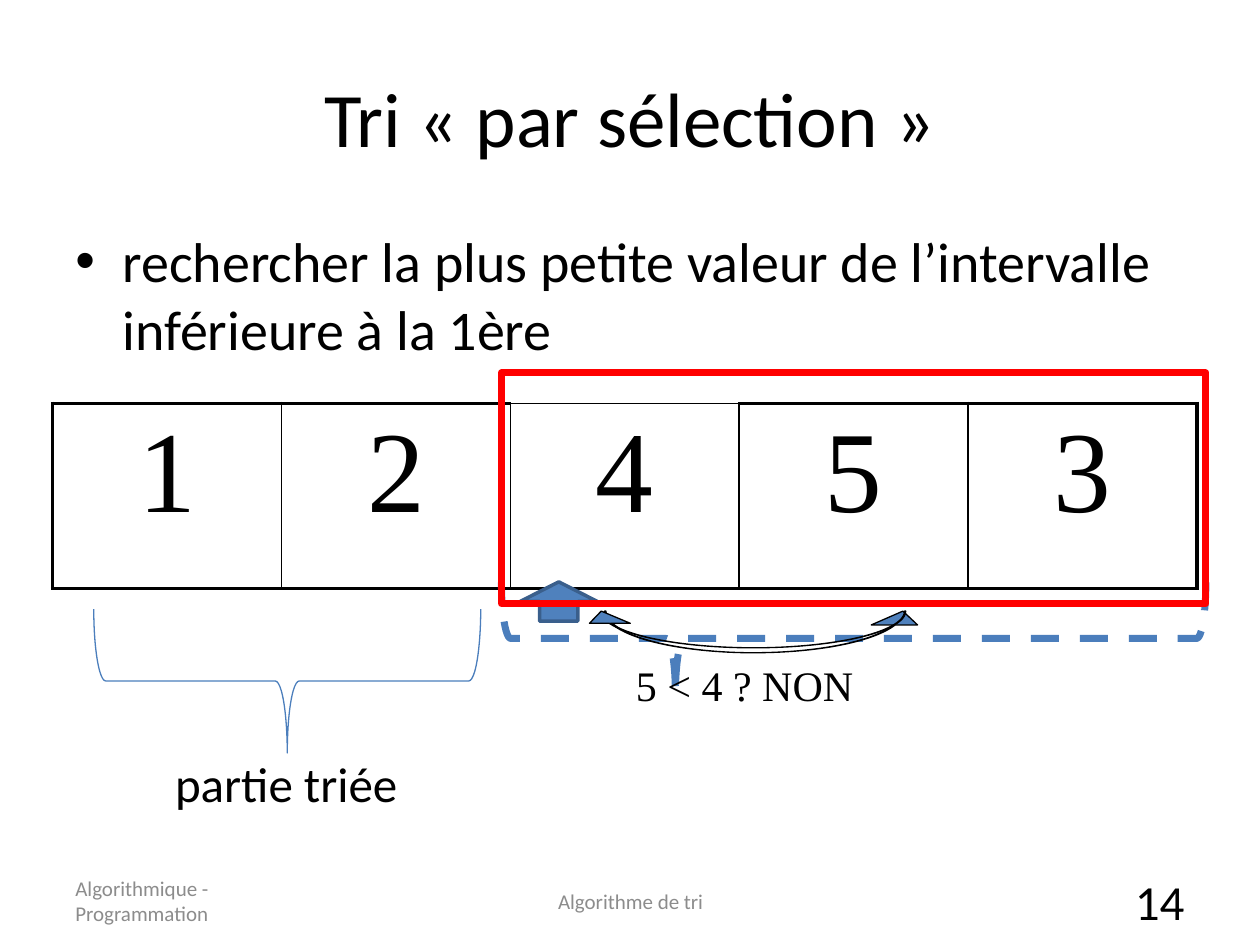
"""Build the selection sort slide: array, sorted part and current comparison."""
from dataclasses import dataclass
from typing import Optional

from lxml.etree import SubElement
from pptx import Presentation
from pptx.dml.color import RGBColor
from pptx.enum.dml import MSO_LINE_DASH_STYLE as Dash
from pptx.enum.shapes import MSO_AUTO_SHAPE_TYPE as Preset
from pptx.enum.text import MSO_AUTO_SIZE as AutoSize
from pptx.enum.text import MSO_VERTICAL_ANCHOR as Anchor
from pptx.enum.text import PP_PARAGRAPH_ALIGNMENT as Align
from pptx.oxml.ns import qn
from pptx.util import Cm, Pt

BLACK = RGBColor(0x00, 0x00, 0x00)
GRAY = RGBColor(0x8C, 0x8C, 0x8C)
RED = RGBColor(0xFF, 0x00, 0x00)
BLUE = RGBColor(0x4F, 0x81, 0xBD)
BRACE_BLUE = RGBColor(0x4B, 0x7E, 0xBC)
DARK_BLUE = RGBColor(0x3A, 0x5F, 0x8C)
SANS, SERIF = "Calibri", "Times New Roman"
THIN, THICK = 1, 2.25
VALUES = ("1", "2", "4", "5", "3")
CURRENT = 2


@dataclass(frozen=True)
class Mark:
    preset: Preset
    at: tuple
    line: RGBColor
    width: float
    fill: Optional[RGBColor] = None
    adjust: tuple = ()
    rotation: int = 0
    flip: Optional[str] = None
    dash: Optional[Dash] = None


@dataclass(frozen=True)
class Label:
    text: str
    at: tuple
    size: float
    font: str = SANS
    color: RGBColor = BLACK
    align: Align = Align.LEFT
    anchor: Anchor = Anchor.TOP
    wrap: bool = True


TASK = Label("rechercher la plus petite valeur de l’intervalle inférieure à la 1ère",
             (1.27, 4.45, 22.86, 12.57), 32)
FOOTERS = (
    Label("Algorithmique - Programmation", (1.27, 17.65, 5.8, 1.02), 12,
          color=GRAY, anchor=Anchor.MIDDLE),
    Label("Algorithme de tri", (8.69, 17.65, 8.05, 1.02), 12,
          color=GRAY, align=Align.CENTER, anchor=Anchor.MIDDLE),
    Label("14", (18.21, 17.65, 5.92, 1.02), 28,
          align=Align.RIGHT, anchor=Anchor.MIDDLE),
)
COMPARISON = Label("5 < 4 ? NON", (12.57, 13.18, 4.93, 1.27), 24, font=SERIF, wrap=False)
SORTED_PART = Label("partie triée", (3.28, 15.06, 5.03, 1.45), 28, wrap=False)

BEND = (0.032, 1.112, 0.333)
UNSORTED_BRACE = Mark(Preset.LEFT_BRACE, (16.08, 5.77, 2.26, 14.2), BRACE_BLUE, 4,
                      adjust=(0.083, 0.247), rotation=270, dash=Dash.DASH)
SWEEPS = (
    Mark(Preset.CURVED_UP_ARROW, (12.19, 12.32, 6.48, 0.84), BLACK, 0.75, BLUE, BEND),
    Mark(Preset.CURVED_UP_ARROW, (11.71, 12.32, 6.55, 0.74), BLACK, 0.75, BLUE, BEND,
         flip="flipH"),
)
POINTER = Mark(Preset.UP_ARROW, (10.49, 11.73, 1.55, 0.79), DARK_BLUE, 2, BLUE)
SORTED_BRACE = Mark(Preset.LEFT_BRACE, (4.34, 9.83, 2.9, 7.8), BRACE_BLUE, 0.75,
                    rotation=270, flip="flipV")
INTERVAL = Mark(Preset.RECTANGLE, (10.11, 7.52, 14.2, 4.65), RED, 4)


def write(frame, text: str, *, size: float, font: str = SANS,
          color: RGBColor = BLACK, align: Align = Align.LEFT):
    para = frame.paragraphs[0]
    para.alignment = align
    span = para.add_run()
    span.text = text
    span.font.size = Pt(size)
    span.font.name = font
    span.font.color.rgb = color
    return para


def add_label(page, label: Label):
    box = page.shapes.add_textbox(*map(Cm, label.at))
    frame = box.text_frame
    frame.word_wrap = label.wrap
    frame.auto_size = AutoSize.NONE if label.wrap else AutoSize.SHAPE_TO_FIT_TEXT
    frame.vertical_anchor = label.anchor
    return write(frame, label.text, size=label.size, font=label.font,
                 color=label.color, align=label.align)


def add_bullet(para) -> None:
    properties = para._p.get_or_add_pPr()
    properties.set("marL", str(Cm(0.95)))
    properties.set("indent", str(-Cm(0.95)))
    SubElement(properties, qn("a:buFont")).set("typeface", "Arial")
    SubElement(properties, qn("a:buChar")).set("char", "•")


def add_mark(page, mark: Mark) -> None:
    shape = page.shapes.add_shape(mark.preset, *map(Cm, mark.at))
    shape.shadow.inherit = False
    shape.rotation = mark.rotation
    for index, value in enumerate(mark.adjust):
        shape.adjustments[index] = value
    if mark.fill is None:
        shape.fill.background()
    else:
        shape.fill.solid()
        shape.fill.fore_color.rgb = mark.fill
    shape.line.color.rgb = mark.line
    shape.line.width = Pt(mark.width)
    if mark.dash is not None:
        shape.line.dash_style = mark.dash
    if mark.flip:
        shape.element.spPr.xfrm.set(mark.flip, "1")


def set_borders(cell, **widths: float) -> None:
    properties = cell._tc.get_or_add_tcPr()
    for index, side in enumerate("LRTB"):
        line = SubElement(properties, qn(f"a:ln{side}"), w=str(Pt(widths[side])))
        fill = SubElement(line, qn("a:solidFill"))
        SubElement(fill, qn("a:srgbClr")).set("val", str(BLACK))
        properties.insert(index, line)


def add_array(page) -> None:
    frame = page.shapes.add_table(1, len(VALUES), Cm(1.06), Cm(8.13), Cm(23.07), Cm(3.73))
    table = frame.table
    table.first_row = table.horz_banding = False
    last = len(VALUES) - 1
    for index, value in enumerate(VALUES):
        cell = table.cell(0, index)
        cell.fill.background()
        write(cell.text_frame, value, size=66, font=SERIF, align=Align.CENTER)
        set_borders(cell, L=THICK if index == 0 else THIN,
                    R=THICK if index == last else THIN,
                    T=THIN if index == CURRENT else THICK, B=THICK)


def add_title(page) -> None:
    title = page.shapes.title
    title.left, title.top, title.width, title.height = map(Cm, (1.27, 0.76, 22.86, 3.18))
    title.text_frame.vertical_anchor = Anchor.MIDDLE
    write(title.text_frame, "Tri « par sélection »", size=44, align=Align.CENTER)


def main() -> None:
    deck = Presentation()
    deck.slide_width, deck.slide_height = Cm(25.4), Cm(19.05)
    page = deck.slides.add_slide(deck.slide_layouts[5])
    add_title(page)
    add_bullet(add_label(page, TASK))
    add_array(page)
    add_mark(page, UNSORTED_BRACE)
    for footer in FOOTERS:
        add_label(page, footer)
    for sweep in SWEEPS:
        add_mark(page, sweep)
    add_label(page, COMPARISON)
    add_mark(page, POINTER)
    add_mark(page, SORTED_BRACE)
    add_label(page, SORTED_PART)
    add_mark(page, INTERVAL)
    deck.save("out.pptx")


if __name__ == "__main__":
    main()
